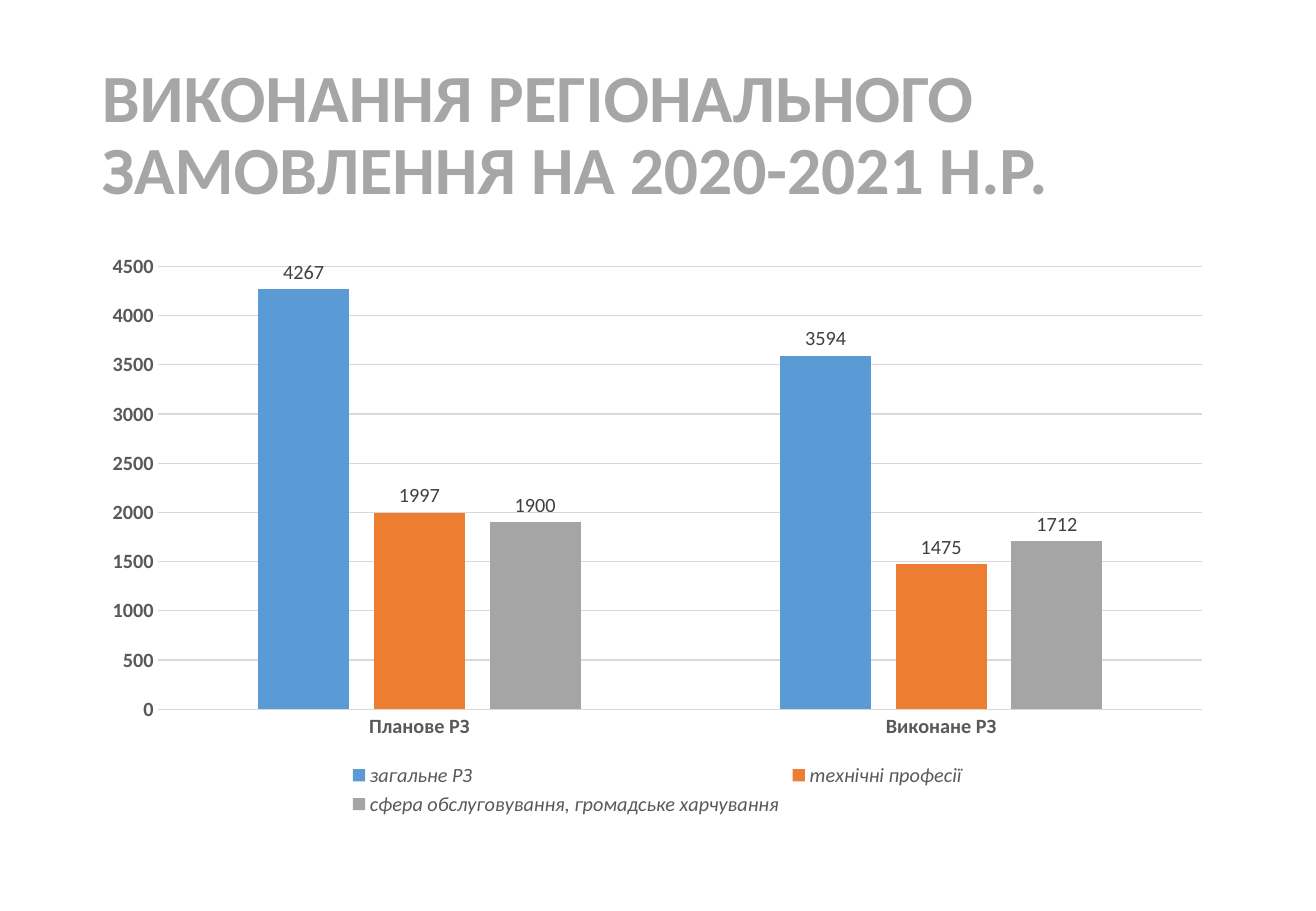
from pptx import Presentation
from pptx.chart.data import CategoryChartData
from pptx.dml.color import RGBColor
from pptx.enum.chart import XL_CHART_TYPE, XL_LABEL_POSITION, XL_LEGEND_POSITION, XL_TICK_MARK
from pptx.enum.text import MSO_ANCHOR
from pptx.util import Inches, Pt

FONT = "Calibri"
WIDTH, HEIGHT = Inches(10.83), Inches(7.5)
CATEGORIES = ["Планове РЗ", "Виконане РЗ"]
SERIES = [
    ("загальне РЗ", (4267, 3594), "5B9BD5"),
    ("технічні професії", (1997, 1475), "ED7D31"),
    ("сфера обслуговування, громадське харчування", (1900, 1712), "A5A5A5"),
]


def style_font(font, size, color, bold=False, italic=False):
    """Set the face, size, colour and emphasis of a font."""
    font.name = FONT
    font.size = Pt(size)
    font.bold = bold
    font.italic = italic
    font.color.rgb = RGBColor.from_string(color)


def style_line(line, color):
    """Draw a thin line in the given colour."""
    line.color.rgb = RGBColor.from_string(color)
    line.width = Pt(0.75)


def add_title(s, box, text):
    """Place the slide heading in the box."""
    tf = s.shapes.add_textbox(*box).text_frame
    tf.word_wrap = True
    tf.vertical_anchor = MSO_ANCHOR.MIDDLE
    p = tf.paragraphs[0]
    p.text = text
    p.line_spacing = 0.9
    style_font(p.runs[0].font, 40, "A6A6A6", bold=True)


def style_axes(chart):
    """Format the category and value axes."""
    for axis in (chart.category_axis, chart.value_axis):
        axis.major_tick_mark = axis.minor_tick_mark = XL_TICK_MARK.NONE
        style_font(axis.tick_labels.font, 12, "595959", bold=axis is not chart.value_axis)
    style_font(chart.category_axis.tick_labels.font, 12, "595959", bold=True)
    style_line(chart.category_axis.format.line, "D9D9D9")
    values = chart.value_axis
    values.minimum_scale, values.maximum_scale, values.major_unit = 0, 4500, 500
    values.format.line.fill.background()
    style_line(values.major_gridlines.format.line, "D9D9D9")


def add_order_chart(s, box):
    """Place the clustered columns of the regional order in the box."""
    data = CategoryChartData()
    data.categories = CATEGORIES
    for name, values, _ in SERIES:
        data.add_series(name, values)
    chart = s.shapes.add_chart(XL_CHART_TYPE.COLUMN_CLUSTERED, *box, data).chart
    style_font(chart.font, 10, "000000")
    chart.has_title = False
    style_axes(chart)
    chart.has_legend = True
    chart.legend.position = XL_LEGEND_POSITION.BOTTOM
    chart.legend.include_in_layout = False
    style_font(chart.legend.font, 12, "595959", italic=True)
    plot = chart.plots[0]
    plot.gap_width, plot.overlap = 219, -27
    plot.vary_by_categories = False
    for series, (_, _, color) in zip(plot.series, SERIES):
        series.format.fill.solid()
        series.format.fill.fore_color.rgb = RGBColor.from_string(color)
        labels = series.data_labels
        labels.show_value = True
        labels.position = XL_LABEL_POSITION.OUTSIDE_END
        style_font(labels.font, 12, "404040")


def main():
    """Build the slide and save it."""
    prs = Presentation()
    prs.slide_width, prs.slide_height = WIDTH, HEIGHT
    s = prs.slides.add_slide(prs.slide_layouts[6])
    left, width = Inches(0.74), Inches(9.34)
    add_title(s, (left, Inches(0.4), width, Inches(1.45)),
              "ВИКОНАННЯ РЕГІОНАЛЬНОГО ЗАМОВЛЕННЯ НА 2020-2021 Н.Р.")
    add_order_chart(s, (left, Inches(2), width, Inches(4.76)))
    prs.save("out.pptx")


if __name__ == "__main__":
    main()
